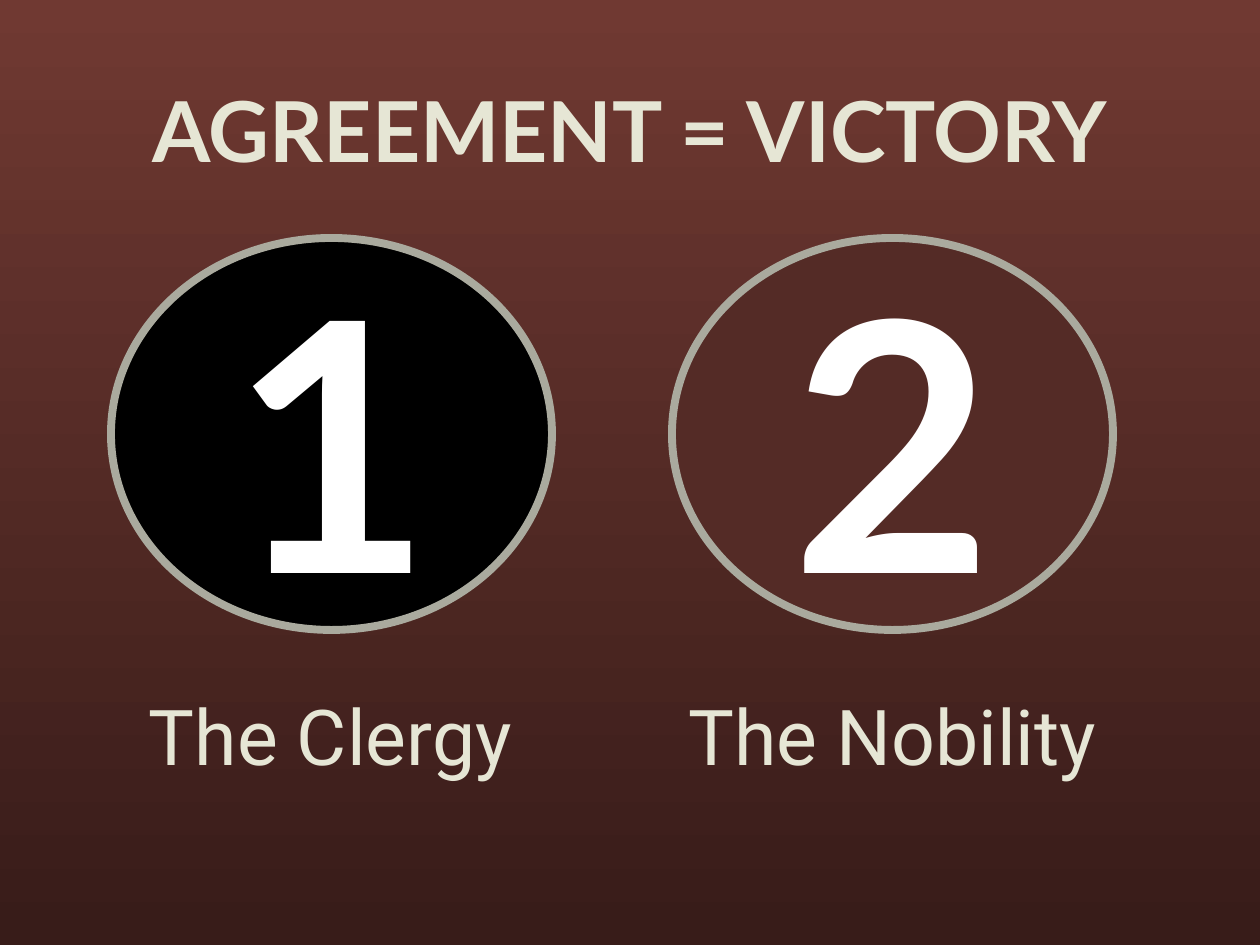
from dataclasses import dataclass

from pptx import Presentation
from pptx.dml.color import RGBColor as RGB
from pptx.enum.shapes import MSO_SHAPE as Shape
from pptx.enum.text import MSO_ANCHOR as Anchor, MSO_AUTO_SIZE as Auto, PP_ALIGN as Align
from pptx.util import Emu, Pt


@dataclass(frozen=True)
class Theme:
    """Colours, fonts and type sizes of the slide."""
    top: str = "703932"
    base: str = "381C19"
    cream: str = "E6E6D5"
    white: str = "FFFFFF"
    rim: str = "AAAA9E"
    head: str = "Lato"
    body: str = "Roboto"
    title: int = 48
    label: int = 44
    digit: int = 199
    edge: float = 4.5


THEME = Theme()
SCALE = 914400 / 126
WIDE, HIGH = 1260, 945
DISC_TOP, DISC_W, DISC_H = 238, 441, 392
LABEL_TOP, LABEL_H = 682, 106
ESTATES = [
    ("1", "000000", 111, "The Clergy", 94, 473),
    ("2", "542B26", 672, "The Nobility", 672, 441),
]


def px(num):
    """Turn pixels into EMU."""
    return Emu(round(num * SCALE))


def put(obj, vals):
    """Set attributes from a dict."""
    for name, val in vals.items():
        setattr(obj, name, val)


def place(shape, box):
    """Move a shape to a pixel box."""
    put(shape, dict(zip(("left", "top", "width", "height"), map(px, box))))


def write(shape, text, face, size, hue, bold, frame):
    """Fill a shape with one centred line of text."""
    body = shape.text_frame
    put(body, {"text": text, "word_wrap": True, **frame})
    para = body.paragraphs[0]
    para.alignment = Align.CENTER
    font = para.runs[0].font
    put(font, {"name": face, "size": Pt(size), "bold": bold})
    font.color.rgb = RGB.from_string(hue)


def paint(slide):
    """Lay the gradient behind the slide."""
    fill = slide.background.fill
    fill.gradient()
    fill.gradient_angle = 270
    for stop, hue, pos in zip(fill.gradient_stops, (THEME.top, THEME.base), (0, 0.99)):
        stop.color.rgb = RGB.from_string(hue)
        stop.position = pos


def add_title(slide, text):
    """Set the slide title."""
    title = slide.shapes.title
    place(title, (0, 72, WIDE, 115))
    frame = {"vertical_anchor": Anchor.TOP, "auto_size": Auto.SHAPE_TO_FIT_TEXT}
    write(title, text, THEME.head, THEME.title, THEME.cream, True, frame)


def add_disc(slide, digit, hue, left):
    """Add a rimmed ellipse with a large digit."""
    box = map(px, (left, DISC_TOP, DISC_W, DISC_H))
    disc = slide.shapes.add_shape(Shape.OVAL, *box)
    disc.shadow.inherit = False
    disc.fill.solid()
    disc.fill.fore_color.rgb = RGB.from_string(hue)
    disc.line.color.rgb = RGB.from_string(THEME.rim)
    disc.line.width = Pt(THEME.edge)
    frame = {"vertical_anchor": Anchor.MIDDLE}
    write(disc, digit, THEME.head, THEME.digit, THEME.white, True, frame)


def add_label(slide, text, left, width):
    """Add the name below a disc."""
    label = slide.shapes.add_textbox(*map(px, (left, LABEL_TOP, width, LABEL_H)))
    frame = {"auto_size": Auto.SHAPE_TO_FIT_TEXT}
    write(label, text, THEME.body, THEME.label, THEME.cream, False, frame)


def main():
    """Build and save the slide."""
    deck = Presentation()
    put(deck, {"slide_width": px(WIDE), "slide_height": px(HIGH)})
    slide = deck.slides.add_slide(deck.slide_layouts.get_by_name("Title Only"))
    paint(slide)
    add_title(slide, "AGREEMENT = VICTORY")
    for digit, hue, left, name, start, width in ESTATES:
        add_disc(slide, digit, hue, left)
        add_label(slide, name, start, width)
    deck.save("out.pptx")


if __name__ == "__main__":
    main()
